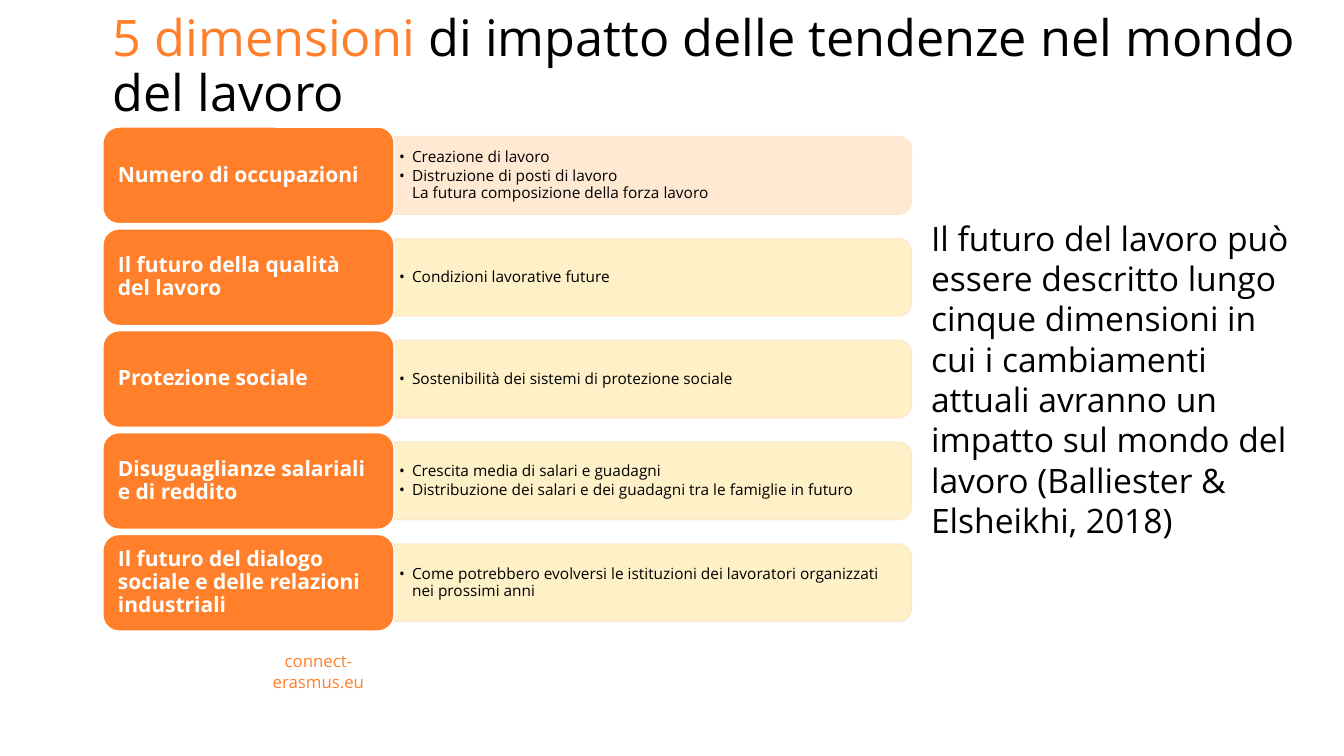
from lxml.etree import SubElement
from pptx import Presentation
from pptx.dml.color import RGBColor
from pptx.enum.shapes import MSO_SHAPE
from pptx.enum.text import MSO_ANCHOR, PP_ALIGN
from pptx.oxml.ns import qn
from pptx.util import Pt

FONT = "Open Sans"
COLORS = {
    "orange": "FF7F2A",
    "peach": "FFE7CE",
    "cream": "FEEFC1",
    "black": "000000",
    "white": "FFFFFF",
}
# Label, band colour, bullets (\v is a line break inside a bullet)
DIMENSIONS = [
    ("Numero di occupazioni", "peach",
     ["Creazione di lavoro",
      "Distruzione di posti di lavoro\vLa futura composizione della forza lavoro"]),
    ("Il futuro della qualità del lavoro", "cream",
     ["Condizioni lavorative future"]),
    ("Protezione sociale", "cream",
     ["Sostenibilità dei sistemi di protezione sociale"]),
    ("Disuguaglianze salariali e di reddito", "cream",
     ["Crescita media di salari e guadagni",
      "Distribuzione dei salari e dei guadagni tra le famiglie in futuro"]),
    ("Il futuro del dialogo sociale e delle relazioni industriali", "cream",
     ["Come potrebbero evolversi le istituzioni dei lavoratori organizzati "
      "nei prossimi anni"]),
]


def rgb(name):
    return RGBColor.from_string(COLORS[name])


def set_frame(sp, anchor, insets=(7.2, 3.6, 7.2, 3.6)):
    tf = sp.text_frame
    tf.word_wrap = True
    tf.vertical_anchor = anchor
    tf.margin_left, tf.margin_top, tf.margin_right, tf.margin_bottom = map(Pt, insets)
    return tf


def add_box(s, box, anchor, **kwargs):
    return set_frame(s.shapes.add_textbox(*map(Pt, box)), anchor, **kwargs)


def add_run(p, text, size, color, bold=False):
    for i, line in enumerate(text.split("\v")):
        if i:
            p.add_line_break()
        r = p.add_run()
        r.text = line
        r.font.name = FONT
        r.font.size = Pt(size)
        r.font.bold = bold
        r.font.color.rgb = rgb(color)


def add_shape(s, kind, box, fill, line, alpha=None):
    sp = s.shapes.add_shape(kind, *map(Pt, box))
    sp.shadow.inherit = False
    sp.fill.solid()
    sp.fill.fore_color.rgb = rgb(fill)
    sp.line.color.rgb = rgb(line)
    sp.line.width = Pt(1)
    if alpha:
        for clr in sp._element.spPr.iter(qn("a:srgbClr")):
            SubElement(clr, qn("a:alpha"), val=str(alpha * 1000))
    return sp


def add_bullet(p):
    pPr = p._p.get_or_add_pPr()
    pPr.set("marL", str(Pt(9.2)))
    pPr.set("indent", str(-Pt(10.6)))
    SubElement(SubElement(pPr, qn("a:buClr")), qn("a:srgbClr"), val=COLORS["black"])
    SubElement(pPr, qn("a:buFont"), typeface=FONT)
    SubElement(pPr, qn("a:buChar"), char="•")


def add_title(s, box):
    p = add_box(s, box, MSO_ANCHOR.BOTTOM).paragraphs[0]
    p.line_spacing = 0.9
    add_run(p, "5 dimensioni ", 36, "orange")
    add_run(p, "di impatto delle tendenze nel mondo del lavoro", 36, "black")


def add_dimension(s, box, label, color, bullets):
    x, y, w, h = box
    label_w, band_h = 208, 55.4
    band_x, band_w = x + label_w, w - label_w

    # Band: a shape with two round corners, turned to the right
    cx, cy = band_x + band_w / 2, y + h / 2
    band = add_shape(s, MSO_SHAPE.ROUND_2_SAME_RECTANGLE,
                     (cx - band_h / 2, cy - band_w / 2, band_h, band_w),
                     color, "peach", alpha=90)
    band.rotation = 90

    # Bullets
    tf = add_box(s, (band_x, cy - 25, band_w - 2, 50), MSO_ANCHOR.MIDDLE,
                 insets=(3.6, 1.5, 3.6, 1.5))
    for i, text in enumerate(bullets):
        p = tf.add_paragraph() if i else tf.paragraphs[0]
        p.line_spacing = 0.9
        if i:
            p.space_before = Pt(1.6)
        add_bullet(p)
        add_run(p, text, 11, "black")

    # Label
    sp = add_shape(s, MSO_SHAPE.ROUNDED_RECTANGLE, (x, y, label_w, h),
                   "orange", "white")
    p = set_frame(sp, MSO_ANCHOR.MIDDLE, (7.4, 5.6, 8.4, 5.6)).paragraphs[0]
    p.alignment = PP_ALIGN.LEFT
    p.line_spacing = 0.9
    add_run(p, label, 15, "white", bold=True)


def add_dimension_list(s, box):
    x, y, w, h = box
    row_h = 69
    pitch = (h - row_h) / (len(DIMENSIONS) - 1)
    for i, dimension in enumerate(DIMENSIONS):
        add_dimension(s, (x, y + i * pitch, w, row_h), *dimension)


def add_summary(s, box):
    p = add_box(s, box, MSO_ANCHOR.TOP).paragraphs[0]
    add_run(p, "Il futuro del lavoro può essere descritto lungo cinque dimensioni "
               "in cui i cambiamenti attuali avranno un impatto sul mondo del lavoro "
               "(Balliester & Elsheikhi, 2018)", 24, "black")


def add_footer(s, box):
    p = add_box(s, box, MSO_ANCHOR.MIDDLE).paragraphs[0]
    p.alignment = PP_ALIGN.CENTER
    add_run(p, "connect-erasmus.eu", 12, "orange")


def main():
    prs = Presentation()
    prs.slide_width, prs.slide_height = Pt(960), Pt(540)
    s = prs.slides.add_slide(prs.slide_layouts[6])
    add_title(s, (73.5, 0, 886, 90.7))
    add_summary(s, (658, 152, 285, 222))
    add_footer(s, (165.5, 468.7, 124, 21.6))
    add_dimension_list(s, (73.5, 90.8, 577.5, 360))
    prs.save("out.pptx")


if __name__ == "__main__":
    main()
